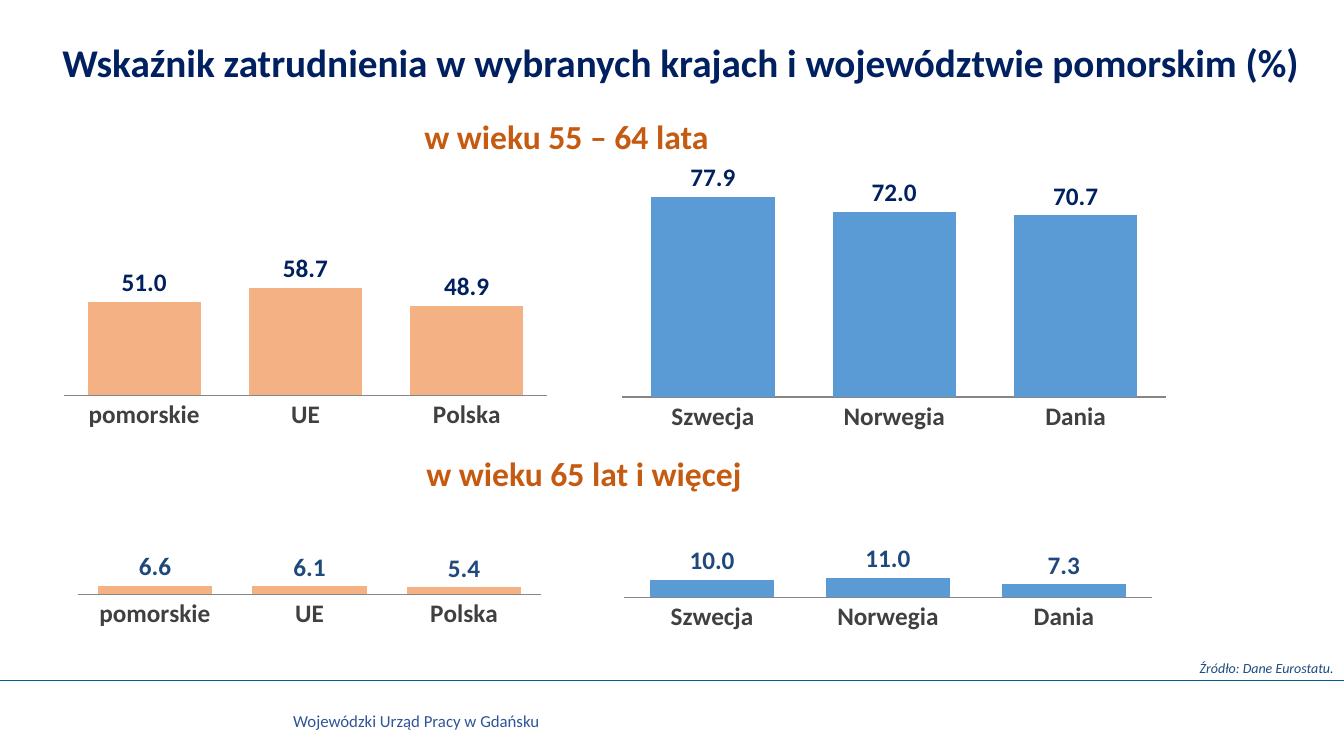
import pptx
import pptx.chart.data
import pptx.dml.color
import pptx.enum.chart
import pptx.enum.shapes
import pptx.enum.text
import pptx.oxml
import pptx.util
from pptx.util import Inches

FONT = "Calibri"
NAVY, BLUE, ORANGE = "002060", "1F497D", "C55A11"
PEACH, SKY = "F4B183", "5B9BD5"
REGION = ("pomorskie", "UE", "Polska")
NORDIC = ("Szwecja", "Norwegia", "Dania")


def rgb(value):
    return pptx.dml.color.RGBColor.from_string(value)


class SlideBuilder:
    def __init__(self, slide):
        self.slide = slide

    def style_font(self, font, size, color, bold=False, italic=False):
        font.name = FONT
        font.size = pptx.util.Pt(size)
        font.color.rgb = rgb(color)
        font.bold = bold
        font.italic = italic

    def text(self, box, text, size, color, bold=False, italic=False,
             middle=False, wrap=True):
        sp = self.slide.shapes.add_textbox(*map(Inches, box))
        tf = sp.text_frame
        tf.text = text
        tf.word_wrap = wrap
        if middle:
            tf.vertical_anchor = pptx.enum.text.MSO_ANCHOR.MIDDLE
        self.style_font(tf.paragraphs[0].runs[0].font, size, color, bold, italic)

    def rule(self, y, color):
        """Draw a horizontal line across the whole slide."""
        line = self.slide.shapes.add_connector(
            pptx.enum.shapes.MSO_CONNECTOR.STRAIGHT,
            0, Inches(y), Inches(13.33), Inches(y))
        line.line.color.rgb = rgb(color)
        line.line.width = pptx.util.Pt(1)
        line._element.spPr.append(pptx.oxml.parse_xml(
            '<a:effectLst xmlns:a="http://schemas.openxmlformats.org/drawingml/2006/main"/>'))

    def column_chart(self, box, cats, vals, fill, label_color, gap, plot_area):
        """Add a chart; plot_area is x, y, w, h as shares of the chart."""
        data = pptx.chart.data.CategoryChartData(number_format="0.0")
        data.categories = cats
        data.add_series("Series 1", vals)
        chart = self.slide.shapes.add_chart(
            pptx.enum.chart.XL_CHART_TYPE.COLUMN_CLUSTERED,
            *map(Inches, box), data).chart
        chart.has_legend = False
        chart.has_title = False
        self.style_font(chart.font, 18, label_color, True)

        axis = chart.category_axis
        axis.major_tick_mark = pptx.enum.chart.XL_TICK_MARK.NONE
        axis.format.line.color.rgb = rgb("868686")
        self.style_font(axis.tick_labels.font, 18, "404040", True)
        axis = chart.value_axis
        axis.minimum_scale, axis.maximum_scale = 0, 100
        axis.has_major_gridlines = False
        axis.visible = False

        plot = chart.plots[0]
        plot.gap_width, plot.overlap = gap, -25
        plot.vary_by_categories = False
        plot.has_data_labels = True
        labels = plot.data_labels
        labels.show_value = True
        labels.number_format = "0.0"
        labels.number_format_is_linked = False
        labels.position = pptx.enum.chart.XL_LABEL_POSITION.OUTSIDE_END
        self.style_font(labels.font, 18, label_color, True)
        bars = plot.series[0].format.fill
        bars.solid()
        bars.fore_color.rgb = rgb(fill)
        self.place_plot(chart, plot_area)

    def place_plot(self, chart, plot_area):
        area = chart._chartSpace.chart.plotArea
        for old in area.xpath("c:layout"):
            area.remove(old)
        sizes = "".join(f'<c:{tag} val="{val}"/>'
                        for tag, val in zip("xywh", plot_area))
        area.insert(0, pptx.oxml.parse_xml(
            '<c:layout xmlns:c="http://schemas.openxmlformats.org/drawingml/2006/chart">'
            '<c:manualLayout><c:layoutTarget val="inner"/>'
            '<c:xMode val="edge"/><c:yMode val="edge"/>'
            f'{sizes}</c:manualLayout></c:layout>'))


def main():
    prs = pptx.Presentation()
    prs.slide_width, prs.slide_height = Inches(13.33), Inches(7.5)
    s = SlideBuilder(prs.slides.add_slide(prs.slide_layouts[6]))

    s.rule(6.75, "065B8A")
    s.text((2.81, 7, 3.56, 0.3), "Wojewódzki Urząd Pracy w Gdańsku", 12, "2F5597")
    s.text((0.52, 0.24, 12.58, 0.74),
           "Wskaźnik zatrudnienia w wybranych krajach i województwie pomorskim (%)",
           28, NAVY, bold=True, middle=True)
    s.text((4.11, 1.13, 3.37, 0.44), "w wieku 55 – 64 lata", 24, ORANGE,
           bold=True, middle=True)
    s.text((4.13, 4.35, 3.97, 0.69), "w wieku 65 lat i więcej", 24, ORANGE,
           bold=True, middle=True)
    s.text((11.8, 6.49, 1.55, 0.27), "Źródło: Dane Eurostatu.", 10, "1E4B7D",
           italic=True, wrap=False)

    s.column_chart((0.53, 2.04, 5, 2.27), REGION, (51, 58.7, 48.9),
                   PEACH, NAVY, 43, (0.02, 0.03, 0.96, 0.8))
    s.column_chart((6.06, 1.33, 5.62, 3), NORDIC, (77.9, 72, 70.7),
                   SKY, NAVY, 47, (0.02, 0.02, 0.96, 0.85))
    s.column_chart((0.52, 4.45, 5, 1.93), REGION, (6.6, 6.1, 5.4),
                   PEACH, BLUE, 35, (0.05, 0.08, 0.92, 0.67))
    s.column_chart((6.08, 4.2, 5.51, 2.43), NORDIC, (10, 11, 7.3),
                   SKY, BLUE, 42, (0.02, 0, 0.95, 0.71))
    prs.save("out.pptx")


if __name__ == "__main__":
    main()
